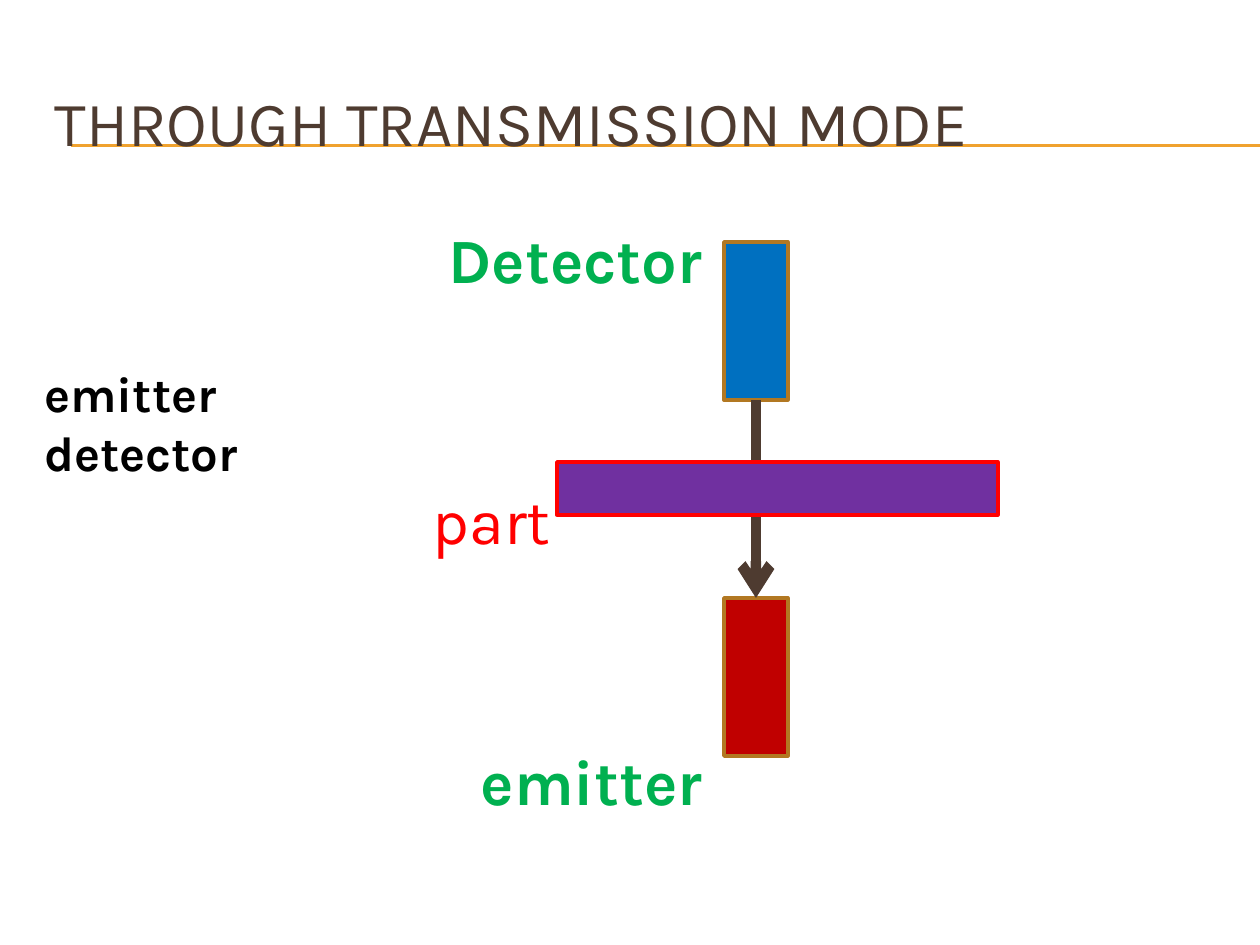
from lxml import etree
from pptx import Presentation
from pptx.dml.color import RGBColor
from pptx.enum.shapes import MSO_CONNECTOR, MSO_SHAPE
from pptx.enum.text import MSO_ANCHOR, MSO_AUTO_SIZE, PP_ALIGN
from pptx.oxml.ns import qn
from pptx.util import Pt

RECT = MSO_SHAPE.RECTANGLE
LINE = MSO_CONNECTOR.STRAIGHT
LEFT = PP_ALIGN.LEFT
TOP, MIDDLE = MSO_ANCHOR.TOP, MSO_ANCHOR.MIDDLE
FIXED = MSO_AUTO_SIZE.NONE

GOLD = RGBColor(0xF0, 0xA2, 0x2E)
BRONZE = RGBColor(0xB2, 0x78, 0x22)
BROWN = RGBColor(0x4E, 0x3B, 0x30)
GREEN = RGBColor(0x00, 0xB0, 0x50)
RED = RGBColor(0xFF, 0x00, 0x00)
DARK_RED = RGBColor(0xC0, 0x00, 0x00)
BLUE = RGBColor(0x00, 0x70, 0xC0)
PURPLE = RGBColor(0x70, 0x30, 0xA0)
BLACK = RGBColor(0x00, 0x00, 0x00)

FONT = "Karla"
SCALE = 914400 / 126


def emu(px):
    return round(px * SCALE)


def write(para, text, size=36, color=BLACK, bold=False, before=0, indent=0):
    """Fill a paragraph, without a bullet, indented by px and spaced by points."""
    para.alignment = LEFT
    para.space_before = Pt(before)
    props = para._p.get_or_add_pPr()
    props.set("marL", str(emu(indent)))
    props.set("indent", "0")
    etree.SubElement(props, qn("a:buNone"))
    run = para.add_run()
    run.text = text
    font = run.font
    font.name, font.size, font.bold = FONT, Pt(size), bold
    font.color.rgb = color


class Page:
    def __init__(self, deck):
        self.slide = deck.slides.add_slide(deck.slide_layouts[1])
        self.shapes = self.slide.shapes

    def holder(self, index, box, anchor):
        """Move a placeholder and return its text frame."""
        shape = self.slide.placeholders[index]
        shape.left, shape.top, shape.width, shape.height = map(emu, box)
        frame = shape.text_frame
        frame.auto_size = FIXED
        frame.vertical_anchor = anchor
        return frame

    def title(self, text, box):
        write(self.holder(0, box, MIDDLE).paragraphs[0], text, color=BROWN)

    def body(self, items, box):
        frame = self.holder(1, box, TOP)
        for i, (text, style) in enumerate(items):
            para = frame.add_paragraph() if i else frame.paragraphs[0]
            write(para, text, **style)

    def label(self, text, box, **style):
        frame = self.shapes.add_textbox(*map(emu, box)).text_frame
        frame.word_wrap = True
        write(frame.paragraphs[0], text, **style)

    def block(self, box, fill, edge):
        shape = self.shapes.add_shape(RECT, *map(emu, box))
        shape.shadow.inherit = False
        shape.fill.solid()
        shape.fill.fore_color.rgb = fill
        shape.line.color.rgb = edge
        shape.line.width = Pt(2)
        return shape

    def line(self, ends, color, width):
        link = self.shapes.add_connector(LINE, *map(emu, ends))
        link.line.color.rgb = color
        link.line.width = Pt(width)
        etree.SubElement(link._element.spPr, qn("a:effectLst"))
        return link

    def rule(self, y):
        """Draw a full-bleed line behind everything else."""
        item = self.line((71, y, 1260, y), GOLD, 0.75)._element
        item.getparent().insert(2, item)

    def arrow(self, start, end):
        """Join the bottom of one block to the top of another."""
        link = self.line((0, 0, 0, 0), BROWN, 6)
        link.begin_connect(start, 2)
        link.end_connect(end, 0)
        tail = etree.SubElement(link.line._get_or_add_ln(), qn("a:tailEnd"))
        tail.set("type", "arrow")


def main():
    deck = Presentation()
    deck.slide_width, deck.slide_height = emu(1260), emu(945)
    page = Page(deck)

    for y in (145, 146):
        page.rule(y)
    page.title("THROUGH TRANSMISSION MODE", (42, 63, 1197, 116))
    page.body([
        ("Detector", dict(color=GREEN, bold=True, indent=394)),
        ("part", dict(color=RED, before=106, indent=378)),
        ("emitter", dict(color=GREEN, bold=True, before=106, indent=426)),
    ], (42, 214, 1197, 624))

    detector = page.block((724, 242, 64, 158), BLUE, BRONZE)
    emitter = page.block((724, 598, 64, 158), DARK_RED, BRONZE)
    page.arrow(detector, emitter)
    page.block((557, 462, 441, 53), PURPLE, RED)
    page.label("emitter detector", (32, 357, 359, 72), size=28, bold=True)

    deck.save("out.pptx")


if __name__ == "__main__":
    main()
